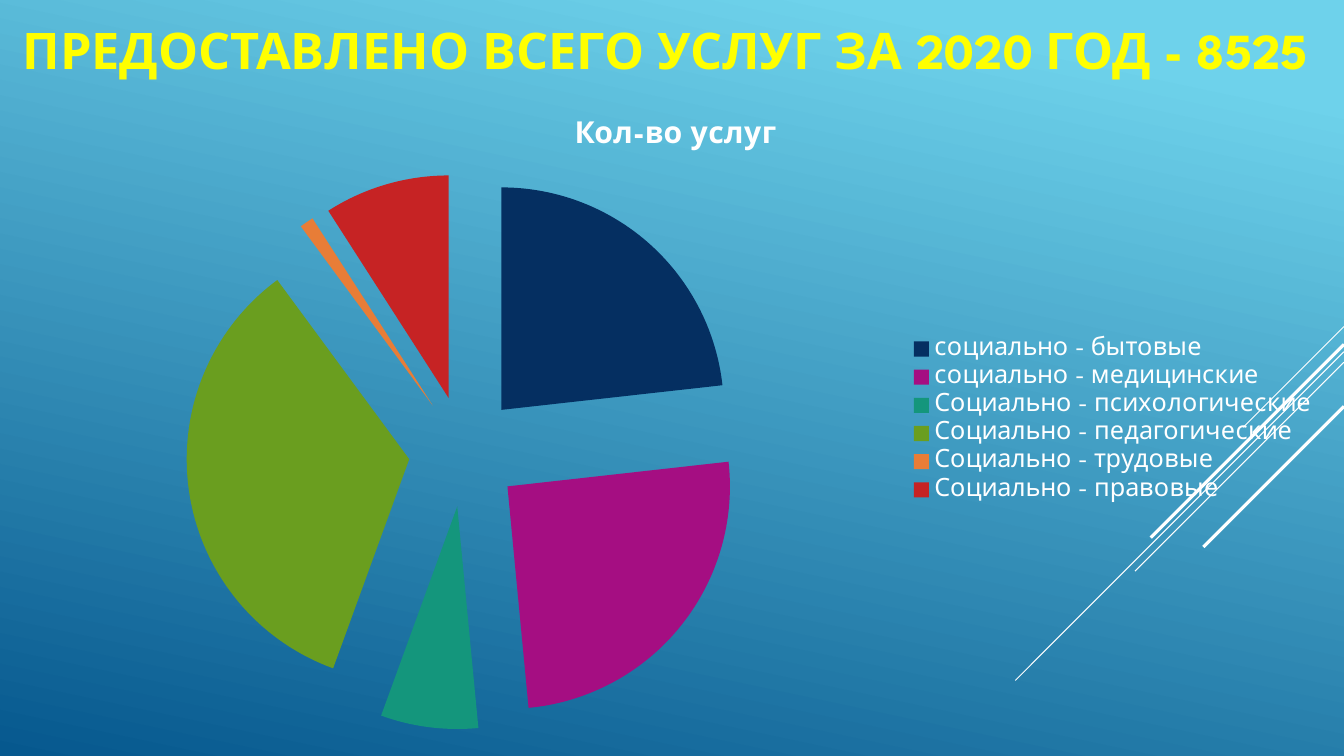
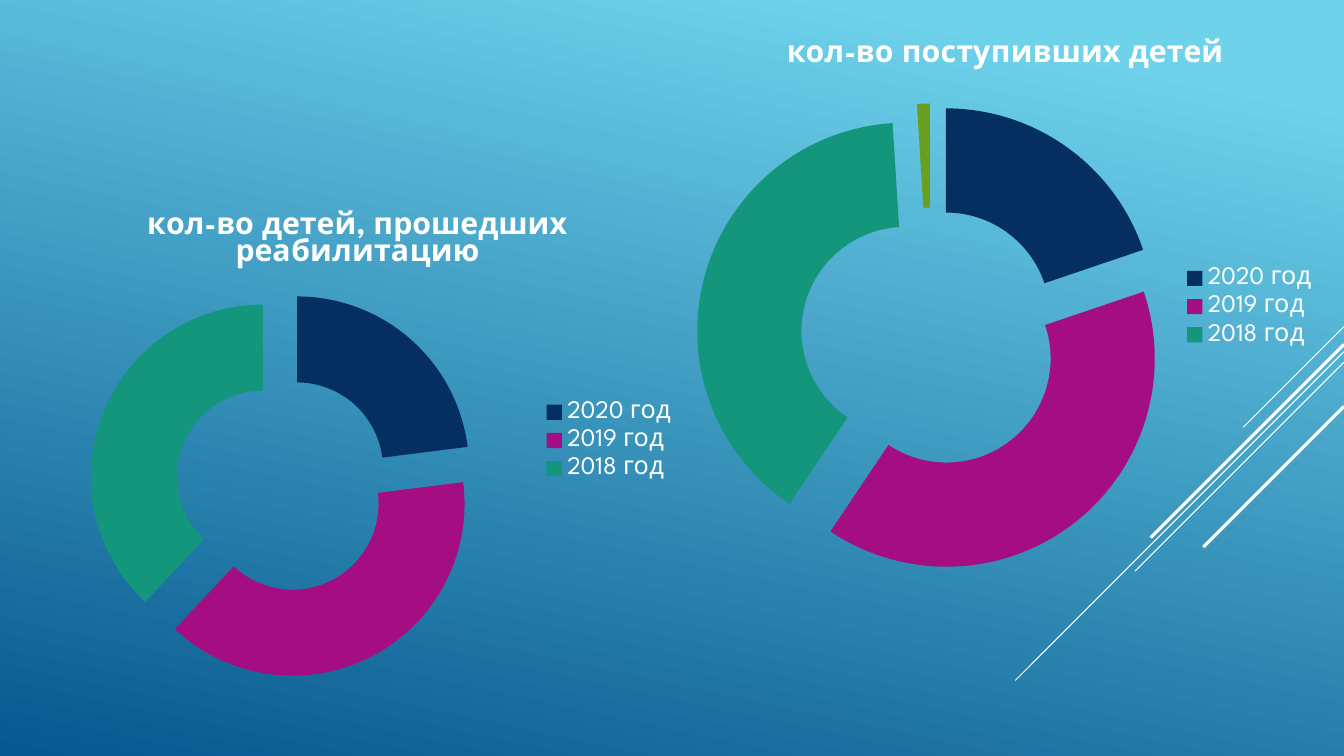
"""Build two slides of social service charts on a shared blue gradient."""

from dataclasses import dataclass

from lxml.etree import SubElement
from pptx import Presentation
from pptx.chart.data import CategoryChartData
from pptx.chart.point import Point
from pptx.dml.color import RGBColor
from pptx.enum.chart import XL_CHART_TYPE, XL_LEGEND_POSITION
from pptx.enum.shapes import MSO_CONNECTOR
from pptx.enum.text import MSO_ANCHOR
from pptx.oxml.ns import qn
from pptx.slide import Slide, SlideMaster
from pptx.util import Emu, Pt

EMU_PER_PX = 9525
SLIDE_WIDTH, SLIDE_HEIGHT = 1280, 720
FONT = "League Spartan"
WHITE, YELLOW = "FFFFFF", "FFFF00"
GRADIENT = ((0.1, "6ED2EB"), (1.0, "06588E"))
GRADIENT_ANGLE = 360 - 102
PALETTE = ("052F61", "A50E82", "14967C", "6A9E1F", "E87D37", "C62324")


@dataclass(frozen=True)
class Box:
    left: int
    top: int
    width: int
    height: int

    def emu(self) -> tuple[Emu, Emu, Emu, Emu]:
        return px(self.left), px(self.top), px(self.width), px(self.height)


@dataclass(frozen=True)
class Stripe:
    top: int
    run: int
    weight: float


@dataclass(frozen=True)
class ShareChart:
    kind: XL_CHART_TYPE
    box: Box
    title: str
    categories: tuple[str, ...]
    values: tuple[int, ...]


STRIPES = (
    Stripe(311, 96, 0.75),
    Stripe(335, 313, 0.75),
    Stripe(345, 199, 0.75),
    Stripe(328, 184, 2.25),
    Stripe(387, 134, 2.25),
)
TITLE = "ПРЕДОСТАВЛЕНО ВСЕГО УСЛУГ ЗА 2020 ГОД - 8525"
TITLE_BOX = Box(12, 12, 1248, 70)
YEARS = ("2020 год", "2019 год", "2018 год")
SERVICES = ShareChart(
    XL_CHART_TYPE.PIE_EXPLODED,
    Box(22, 91, 1243, 617),
    "Кол-во услуг",
    (
        "социально - бытовые",
        "социально - медицинские",
        "Социально - психологические",
        "Социально - педагогические",
        "Социально - трудовые",
        "Социально - правовые",
    ),
    (23, 25, 7, 34, 1, 9),
)
REHABILITATED = ShareChart(
    XL_CHART_TYPE.DOUGHNUT_EXPLODED,
    Box(26, 180, 629, 479),
    "кол-во детей, прошедших реабилитацию",
    YEARS,
    (23, 39, 38),
)
ADMITTED = ShareChart(
    XL_CHART_TYPE.DOUGHNUT_EXPLODED,
    Box(650, 15, 615, 554),
    "кол-во поступивших детей",
    YEARS,
    (20, 40, 40, 1),
)
SLIDES = ((TITLE, (SERVICES,)), ("", (REHABILITATED, ADMITTED)))


def px(length: int) -> Emu:
    return Emu(length * EMU_PER_PX)


def color(value: str) -> RGBColor:
    return RGBColor.from_string(value)


def style_font(font, size: float, text_color: str, bold: bool = False) -> None:
    font.name = FONT
    font.size = Pt(size)
    font.bold = bold
    font.color.rgb = color(text_color)


def paint_background(master: SlideMaster) -> None:
    fill = master.background.fill
    fill.gradient()
    fill.gradient_angle = GRADIENT_ANGLE
    for stop, (position, stop_color) in zip(fill.gradient_stops, GRADIENT):
        stop.position = position
        stop.color.rgb = color(stop_color)


def draw_stripe(slide: Slide, stripe: Stripe) -> None:
    connector = slide.shapes.add_connector(
        MSO_CONNECTOR.STRAIGHT,
        px(SLIDE_WIDTH),
        px(stripe.top),
        px(SLIDE_WIDTH - stripe.run),
        px(stripe.top + stripe.run),
    )
    connector.line.color.rgb = color(WHITE)
    connector.line.width = Pt(stripe.weight)
    SubElement(connector._element.spPr, qn("a:effectLst"))


def draw_title(slide: Slide, text: str) -> None:
    text_frame = slide.shapes.add_textbox(*TITLE_BOX.emu()).text_frame
    text_frame.word_wrap = True
    text_frame.vertical_anchor = MSO_ANCHOR.MIDDLE
    text_frame.text = text
    style_font(text_frame.paragraphs[0].runs[0].font, 36, YELLOW, bold=True)


def draw_chart(slide: Slide, share: ShareChart) -> None:
    data = CategoryChartData()
    data.categories = share.categories
    data.add_series(share.title, share.values)
    chart = slide.shapes.add_chart(share.kind, *share.box.emu(), data).chart
    style_font(chart.font, 18, WHITE)

    chart.has_title = True
    title_frame = chart.chart_title.text_frame
    title_frame.text = share.title
    style_font(title_frame.paragraphs[0].runs[0].font, 21.6, WHITE, bold=True)

    chart.has_legend = True
    chart.legend.position = XL_LEGEND_POSITION.RIGHT
    chart.legend.include_in_layout = False

    plot = chart.plots[0]
    plot.vary_by_categories = True
    plot.has_data_labels = False
    series = plot.series[0]
    for index in range(len(share.values)):
        slice_format = Point(series._element, index).format
        slice_format.fill.solid()
        slice_format.fill.fore_color.rgb = color(PALETTE[index])
        slice_format.line.fill.background()


def main() -> None:
    presentation = Presentation()
    presentation.slide_width = px(SLIDE_WIDTH)
    presentation.slide_height = px(SLIDE_HEIGHT)
    paint_background(presentation.slide_master)
    for title, charts in SLIDES:
        slide = presentation.slides.add_slide(presentation.slide_layouts[6])
        for stripe in STRIPES:
            draw_stripe(slide, stripe)
        if title:
            draw_title(slide, title)
        for share in charts:
            draw_chart(slide, share)
    presentation.save("out.pptx")


if __name__ == "__main__":
    main()
